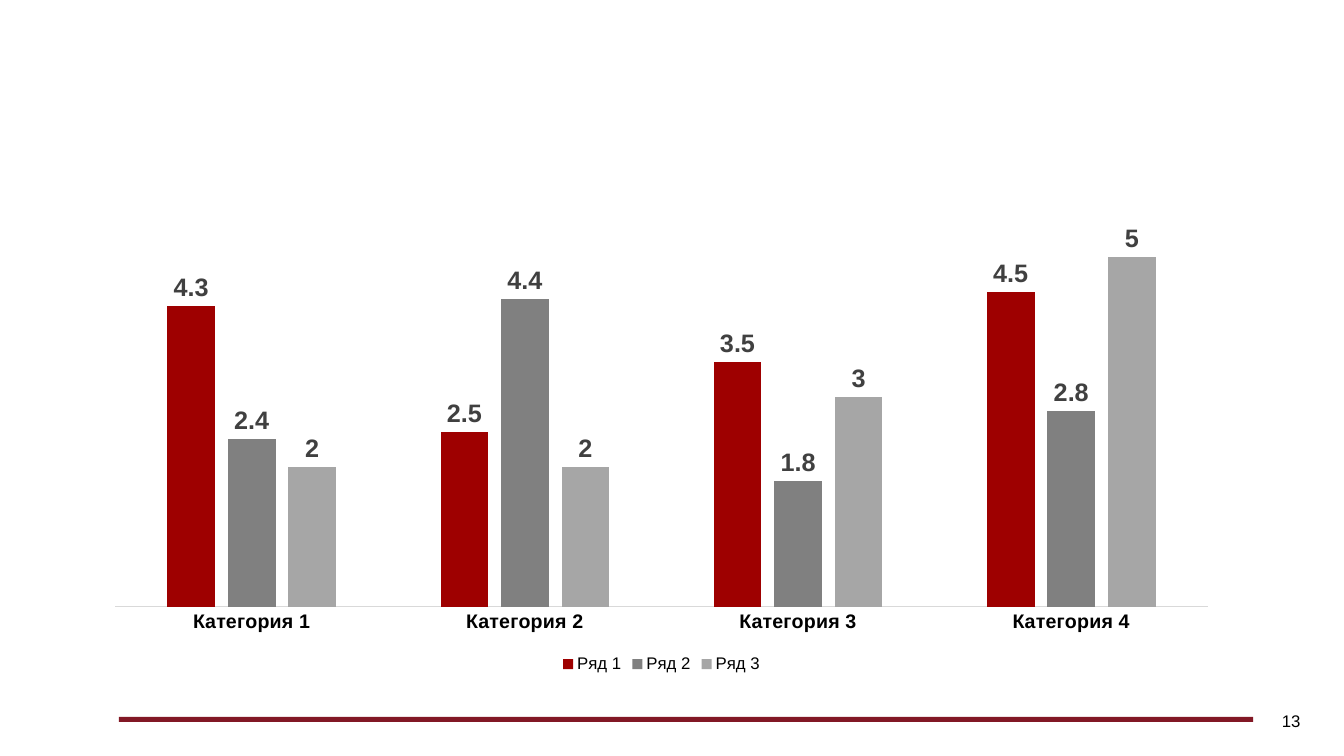
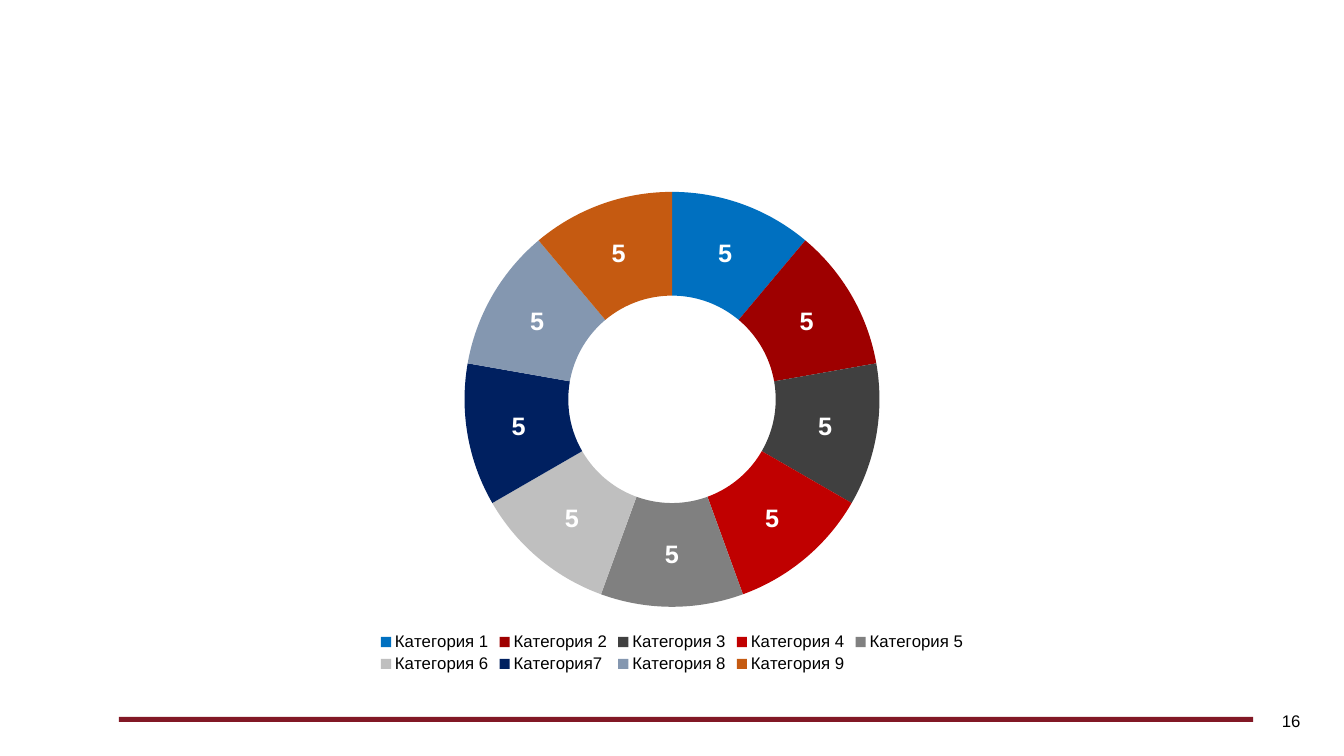
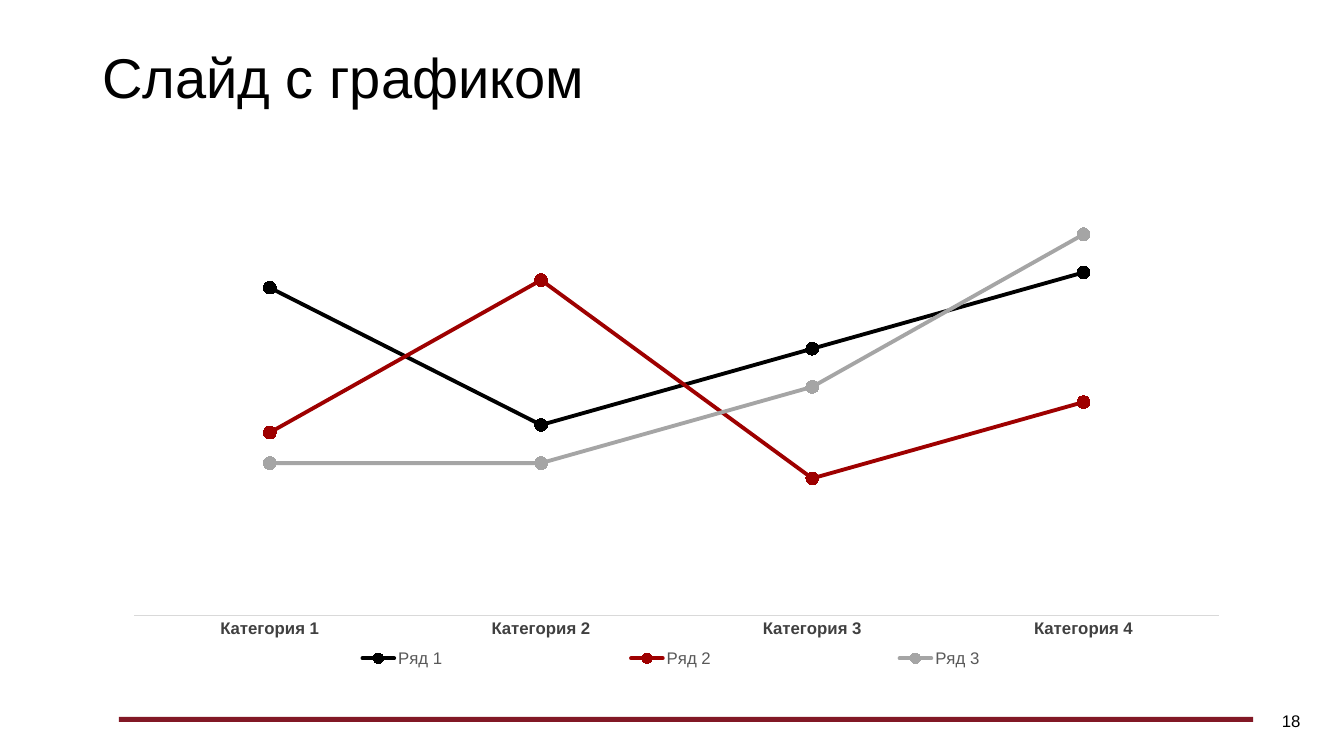
from dataclasses import dataclass
from typing import NamedTuple, Optional

import pptx
import pptx.chart.chart
import pptx.chart.data
import pptx.dml.color
import pptx.enum.chart
import pptx.enum.shapes
import pptx.enum.text
import pptx.oxml
import pptx.oxml.ns
import pptx.slide
import pptx.util

RGBColor = pptx.dml.color.RGBColor
ChartType = pptx.enum.chart.XL_CHART_TYPE
Pt = pptx.util.Pt

BLACK = RGBColor(0x00, 0x00, 0x00)
WHITE = RGBColor(0xFF, 0xFF, 0xFF)
CRIMSON = RGBColor(0x9E, 0x00, 0x00)
BAND_RED = RGBColor(0x82, 0x18, 0x25)
RED = RGBColor(0xC0, 0x00, 0x00)
BLUE = RGBColor(0x00, 0x70, 0xC0)
NAVY = RGBColor(0x00, 0x20, 0x60)
STEEL = RGBColor(0x84, 0x97, 0xB0)
ORANGE = RGBColor(0xC5, 0x5A, 0x11)
CHARCOAL = RGBColor(0x40, 0x40, 0x40)
DIM_GRAY = RGBColor(0x59, 0x59, 0x59)
GRAY = RGBColor(0x80, 0x80, 0x80)
LINE_GRAY = RGBColor(0xA5, 0xA5, 0xA5)
BAR_GRAY = RGBColor(0xA6, 0xA6, 0xA6)
SILVER = RGBColor(0xBF, 0xBF, 0xBF)
AXIS_GRAY = RGBColor(0xD9, 0xD9, 0xD9)

FONT = "Arial"
SLIDE_HEIGHT = pptx.util.Inches(7.5)
SLIDE_WIDTH = SLIDE_HEIGHT * 16 // 9
GRID = 100  # columns and rows on a slide
TITLE_ONLY_LAYOUT, BLANK_LAYOUT = 5, 6


class Box(NamedTuple):
    """Left, top, width and height in grid columns and rows."""
    left: float
    top: float
    width: float
    height: float

    def lengths(self) -> list[int]:
        sides = (SLIDE_WIDTH, SLIDE_HEIGHT) * 2
        return [round(part * side / GRID) for part, side in zip(self, sides)]


class Series(NamedTuple):
    name: str
    values: tuple[float, ...]
    colors: tuple[RGBColor, ...]  # one for the series, or one for each point


@dataclass(frozen=True)
class ChartSlide:
    number: int
    kind: ChartType
    box: Box
    plot_area: Box  # shares of the chart's size
    categories: tuple[str, ...]
    series: tuple[Series, ...]
    title: str = ""
    axis_maximum: float = 0
    axis_size: int = 12
    axis_color: RGBColor = BLACK
    label_color: RGBColor = BLACK
    legend_color: RGBColor = BLACK
    legend_area: Optional[Box] = None


BAND_BOX = Box(8.85, 94.83, 84.4, 0.67)
TITLE_BOX = Box(6.87, 5.33, 90.6, 10.67)
NUMBER_BOX = Box(75, 92.67, 22.5, 5.33)
FOUR_CATEGORIES = tuple(f"Категория {index}" for index in range(1, 5))

SLIDES = (
    ChartSlide(
        number=13,
        kind=ChartType.COLUMN_CLUSTERED,
        box=Box(6.87, 23.43, 84.7, 66.13),
        plot_area=Box(0.02, 0.02, 0.96, 0.84),
        categories=FOUR_CATEGORIES,
        series=(
            Series("Ряд 1", (4.3, 2.5, 3.5, 4.5), (CRIMSON,)),
            Series("Ряд 2", (2.4, 4.4, 1.8, 2.8), (GRAY,)),
            Series("Ряд 3", (2, 2, 3, 5), (BAR_GRAY,)),
        ),
        axis_maximum=6,
        axis_size=14,
        label_color=CHARCOAL,
    ),
    ChartSlide(
        number=16,
        kind=ChartType.DOUGHNUT,
        box=Box(22.78, 23.4, 54.45, 66.13),
        plot_area=Box(0.21, 0.03, 0.58, 0.83),
        categories=FOUR_CATEGORIES + (
            "Категория 5", "Категория 6", "Категория7", "Категория 8", "Категория 9"),
        series=(
            Series("Series 1", (5,) * 9, (
                BLUE, CRIMSON, CHARCOAL, RED, GRAY, SILVER, NAVY, STEEL, ORANGE)),
        ),
        label_color=WHITE,
    ),
    ChartSlide(
        number=18,
        kind=ChartType.LINE_MARKERS,
        box=Box(8.3, 19.5, 84.1, 70.4),
        plot_area=Box(0.02, 0.02, 0.96, 0.86),
        categories=FOUR_CATEGORIES,
        series=(
            Series("Ряд 1", (86, 50, 70, 90), (BLACK,)),
            Series("Ряд 2", (48, 88, 36, 56), (CRIMSON,)),
            Series("Ряд 3", (40, 40, 60, 100), (LINE_GRAY,)),
        ),
        title="Слайд с графиком",
        axis_maximum=120,
        axis_color=CHARCOAL,
        legend_color=DIM_GRAY,
        legend_area=Box(0.06, 0.93, 0.87, 0.06),
    ),
)


def set_font(font, size: int, color: RGBColor, bold: bool = False) -> None:
    font.name = FONT
    font.size = Pt(size)
    font.bold = bold
    font.color.rgb = color


def paint(fill, color: RGBColor) -> None:
    fill.solid()
    fill.fore_color.rgb = color


def add_band(slide: pptx.slide.Slide) -> None:
    band = slide.shapes.add_shape(
        pptx.enum.shapes.MSO_SHAPE.RECTANGLE, *BAND_BOX.lengths())
    band.shadow.inherit = False
    paint(band.fill, BAND_RED)
    band.line.fill.background()


def write_text(shape, text: str, size: int) -> None:
    frame = shape.text_frame
    frame.word_wrap = True
    frame.vertical_anchor = pptx.enum.text.MSO_ANCHOR.MIDDLE
    run = frame.paragraphs[0].add_run()
    run.text = text
    set_font(run.font, size, BLACK)


def add_title(slide: pptx.slide.Slide, text: str) -> None:
    title = slide.shapes.title
    title.left, title.top, title.width, title.height = TITLE_BOX.lengths()
    write_text(title, text, 40)
    paragraph = title.text_frame.paragraphs[0]
    paragraph.alignment = pptx.enum.text.PP_ALIGN.LEFT
    paragraph.line_spacing = 0.9


def add_number(slide: pptx.slide.Slide, number: int) -> None:
    box = slide.shapes.add_textbox(*NUMBER_BOX.lengths())
    write_text(box, str(number), 12)
    box.text_frame.paragraphs[0].alignment = pptx.enum.text.PP_ALIGN.RIGHT


def set_layout(chart: pptx.chart.chart.Chart, tag: str, area: Box, index: int) -> None:
    """Fix the place of the plot area or legend; index is the layout's child position."""
    parent = chart.element.xpath(f".//{tag}")[0]
    for old_layout in parent.xpath("./c:layout"):
        parent.remove(old_layout)
    target = '<c:layoutTarget val="inner"/>' if tag == "c:plotArea" else ""
    places = "".join(f'<c:{name} val="{value}"/>' for name, value in zip("xywh", area))
    parent.insert(index, pptx.oxml.parse_xml(
        f'<c:layout {pptx.oxml.ns.nsdecls("c")}><c:manualLayout>{target}'
        '<c:xMode val="edge"/><c:yMode val="edge"/>'
        f'{places}</c:manualLayout></c:layout>'))


def format_axes(chart: pptx.chart.chart.Chart, content: ChartSlide) -> None:
    category_axis, value_axis = chart.category_axis, chart.value_axis
    category_axis.major_tick_mark = pptx.enum.chart.XL_TICK_MARK.NONE
    category_axis.format.line.color.rgb = AXIS_GRAY
    category_axis.format.line.width = Pt(0.75)
    set_font(category_axis.tick_labels.font, content.axis_size, content.axis_color, True)
    value_axis.minimum_scale = 0
    value_axis.maximum_scale = content.axis_maximum
    value_axis.has_major_gridlines = False
    value_axis.visible = False


def color_series(chart_series, colors: tuple[RGBColor, ...], kind: ChartType) -> None:
    if kind == ChartType.LINE_MARKERS:
        chart_series.smooth = False
        chart_series.format.line.color.rgb = colors[0]
        chart_series.format.line.width = Pt(2.75)
        marker = chart_series.marker
        marker.style = pptx.enum.chart.XL_MARKER_STYLE.CIRCLE
        marker.size = 9
        paint(marker.format.fill, colors[0])
        marker.format.line.color.rgb = colors[0]
    elif kind == ChartType.DOUGHNUT:
        for index, color in enumerate(colors):
            paint(chart_series.points[index].format.fill, color)
    else:
        paint(chart_series.format.fill, colors[0])


def round_line_ends(chart: pptx.chart.chart.Chart) -> None:
    for line in chart.element.xpath(".//c:ser/c:spPr/a:ln"):
        line.set("cap", "rnd")


def add_value_labels(plot, content: ChartSlide) -> None:
    plot.has_data_labels = True
    labels = plot.data_labels
    labels.show_value = True
    labels.show_percentage = False
    set_font(labels.font, 18, content.label_color, True)
    if content.kind == ChartType.COLUMN_CLUSTERED:
        labels.position = pptx.enum.chart.XL_LABEL_POSITION.OUTSIDE_END


def add_legend(chart: pptx.chart.chart.Chart, content: ChartSlide) -> None:
    chart.has_legend = True
    chart.legend.position = pptx.enum.chart.XL_LEGEND_POSITION.BOTTOM
    chart.legend.include_in_layout = False
    set_font(chart.legend.font, 12, content.legend_color)
    if content.legend_area:
        set_layout(chart, "c:legend", content.legend_area, 1)


def add_chart(slide: pptx.slide.Slide, content: ChartSlide) -> None:
    data = pptx.chart.data.CategoryChartData()
    data.categories = content.categories
    for series in content.series:
        data.add_series(series.name, series.values)
    chart = slide.shapes.add_chart(content.kind, *content.box.lengths(), data).chart
    set_font(chart.font, 10, BLACK)
    chart.has_title = False
    plot = chart.plots[0]
    plot.vary_by_categories = content.kind == ChartType.DOUGHNUT
    if content.kind == ChartType.COLUMN_CLUSTERED:
        plot.gap_width, plot.overlap = 219, -27
    if content.kind != ChartType.DOUGHNUT:
        format_axes(chart, content)
    if content.kind != ChartType.LINE_MARKERS:
        add_value_labels(plot, content)
    for chart_series, series in zip(plot.series, content.series):
        color_series(chart_series, series.colors, content.kind)
    round_line_ends(chart)
    add_legend(chart, content)
    set_layout(chart, "c:plotArea", content.plot_area, 0)


def main() -> None:
    presentation = pptx.Presentation()
    presentation.slide_width = SLIDE_WIDTH
    presentation.slide_height = SLIDE_HEIGHT
    for content in SLIDES:
        layout = TITLE_ONLY_LAYOUT if content.title else BLANK_LAYOUT
        slide = presentation.slides.add_slide(presentation.slide_layouts[layout])
        add_band(slide)
        if content.title:
            add_title(slide, content.title)
        add_number(slide, content.number)
        add_chart(slide, content)
    presentation.save("out.pptx")


if __name__ == "__main__":
    main()
